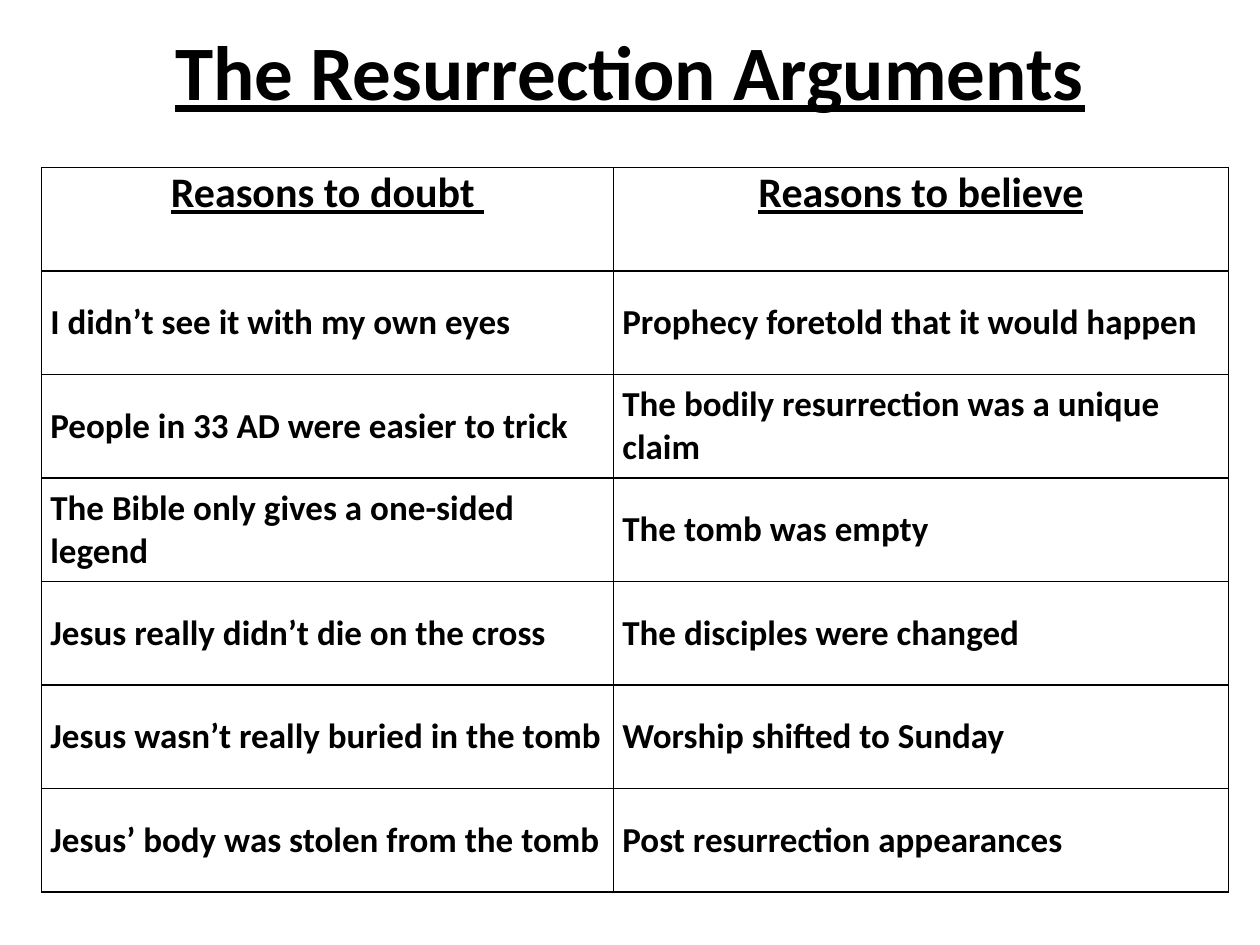
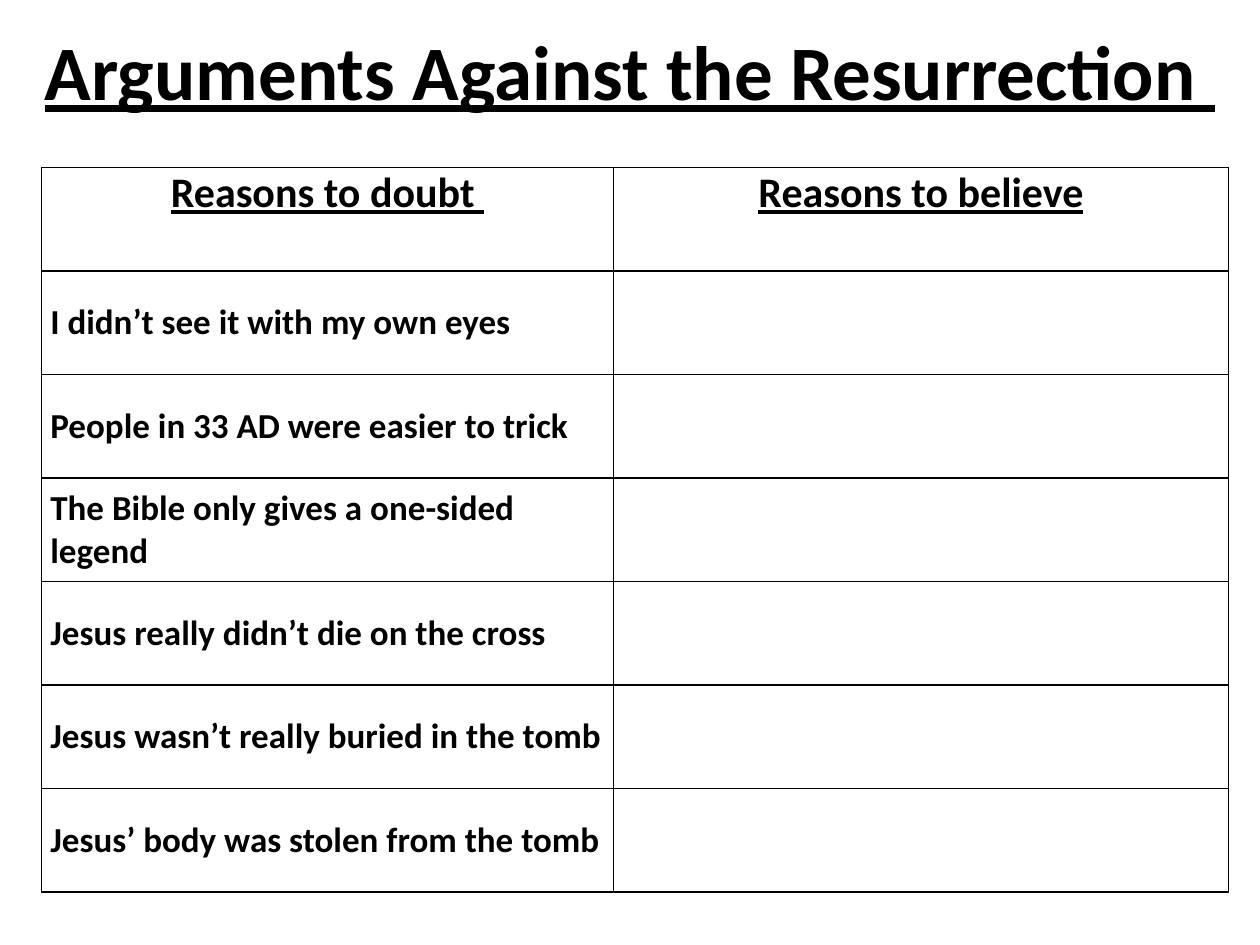
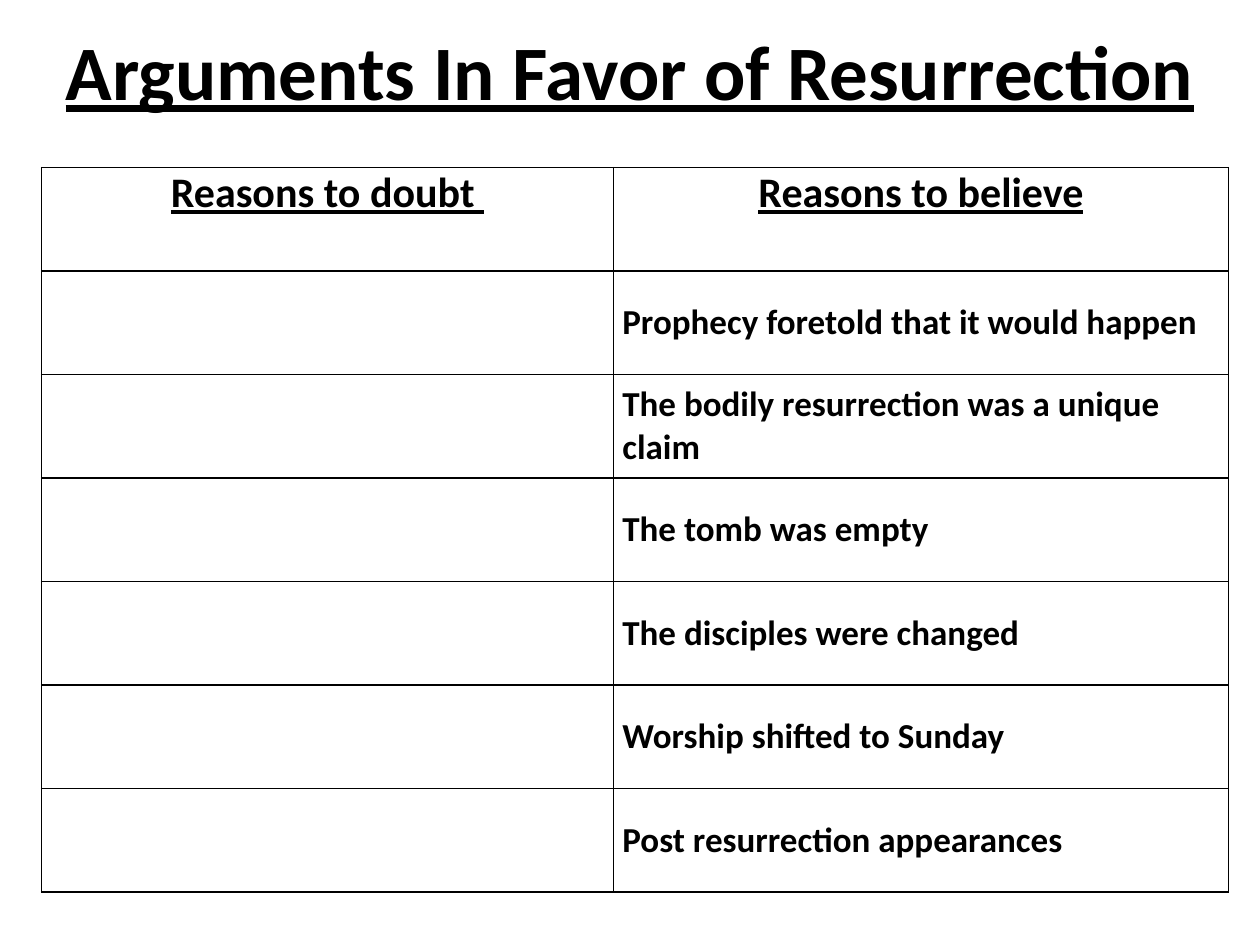
from dataclasses import dataclass

from lxml import etree
from pptx import Presentation
from pptx import util as u
from pptx.dml.color import RGBColor
from pptx.enum import text
from pptx.oxml.ns import qn


@dataclass(frozen=True)
class Theme:
    font: str = "Calibri"
    ink: str = "000000"
    title_size: int = 44
    header_size: int = 24
    body_size: int = 20
    border_width: int = 1


THEME = Theme()
WIDTH, HEIGHT = u.Inches(10), u.Inches(7.5)
TITLE_TOP, TITLE_HEIGHT = u.Inches(0.08), u.Inches(0.95)
TABLE_LEFT, TABLE_TOP = u.Inches(0.33), u.Inches(1.33)
COLUMN_WIDTHS = u.Inches(4.54), u.Inches(4.88)
TABLE_HEIGHT = u.Inches(5.75)
CELL_INSET = u.Inches(0.07)

HEADERS = ("Reasons to doubt ", "Reasons to believe")
DOUBTS = (
    "I didn’t see it with my own eyes",
    "People in 33 AD were easier to trick",
    "The Bible only gives a one-sided legend",
    "Jesus really didn’t die on the cross",
    "Jesus wasn’t really buried in the tomb",
    "Jesus’ body was stolen from the tomb",
)
BELIEFS = (
    "Prophecy foretold that it would happen",
    "The bodily resurrection was a unique claim",
    "The tomb was empty",
    "The disciples were changed",
    "Worship shifted to Sunday",
    "Post resurrection appearances",
)
BLANK = ("",) * len(DOUBTS)

# Title, title width as a share of the slide, left column, right column
SLIDES = (
    ("The Resurrection Arguments", 0.9, DOUBTS, BELIEFS),
    ("Arguments Against the Resurrection ", 0.95, DOUBTS, BLANK),
    ("Arguments In Favor of Resurrection", 1, BLANK, BELIEFS),
)


def style_paragraph(paragraph, size, heading):
    """Bold ink throughout; headings are centred and underlined."""
    paragraph.alignment = text.PP_ALIGN.CENTER if heading else text.PP_ALIGN.LEFT
    font = paragraph.font
    font.name, font.size = THEME.font, u.Pt(size)
    font.bold, font.underline = True, heading
    font.color.rgb = RGBColor.from_string(THEME.ink)


def set_title(slide, wording, share):
    title = slide.shapes.title
    width = int(WIDTH * share)
    title.left, title.top = (WIDTH - width) // 2, TITLE_TOP
    title.width, title.height = width, TITLE_HEIGHT
    frame = title.text_frame
    frame.text = wording
    frame.auto_size = text.MSO_AUTO_SIZE.NONE
    frame.vertical_anchor = text.MSO_ANCHOR.MIDDLE
    style_paragraph(frame.paragraphs[0], THEME.title_size, True)


def add_borders(cell):
    properties = cell._tc.get_or_add_tcPr()
    for side in ("lnL", "lnR", "lnT", "lnB"):
        line = etree.SubElement(properties, qn(f"a:{side}"),
                                w=str(u.Pt(THEME.border_width)))
        fill = etree.SubElement(line, qn("a:solidFill"))
        etree.SubElement(fill, qn("a:srgbClr"), val=THEME.ink)


def fill_cell(cell, wording, heading):
    cell.text = wording
    cell.margin_left = cell.margin_right = CELL_INSET
    cell.margin_top = cell.margin_bottom = 0
    cell.vertical_anchor = text.MSO_ANCHOR.TOP if heading else text.MSO_ANCHOR.MIDDLE
    size = THEME.header_size if heading else THEME.body_size
    style_paragraph(cell.text_frame.paragraphs[0], size, heading)
    add_borders(cell)
    cell.fill.background()


def add_argument_table(slide, doubts, beliefs):
    rows = [HEADERS, *zip(doubts, beliefs)]
    table = slide.shapes.add_table(
        len(rows), len(HEADERS), TABLE_LEFT, TABLE_TOP,
        sum(COLUMN_WIDTHS), TABLE_HEIGHT).table
    table.first_row = table.horz_banding = False
    for column, width in zip(table.columns, COLUMN_WIDTHS):
        column.width = width
    for row_index, row in enumerate(rows):
        for column_index, wording in enumerate(row):
            fill_cell(table.cell(row_index, column_index), wording, row_index == 0)


def main():
    presentation = Presentation()
    presentation.slide_width, presentation.slide_height = WIDTH, HEIGHT
    title_only = presentation.slide_layouts.get_by_name("Title Only")
    for wording, share, doubts, beliefs in SLIDES:
        slide = presentation.slides.add_slide(title_only)
        set_title(slide, wording, share)
        add_argument_table(slide, doubts, beliefs)
    presentation.save("out.pptx")


if __name__ == "__main__":
    main()
